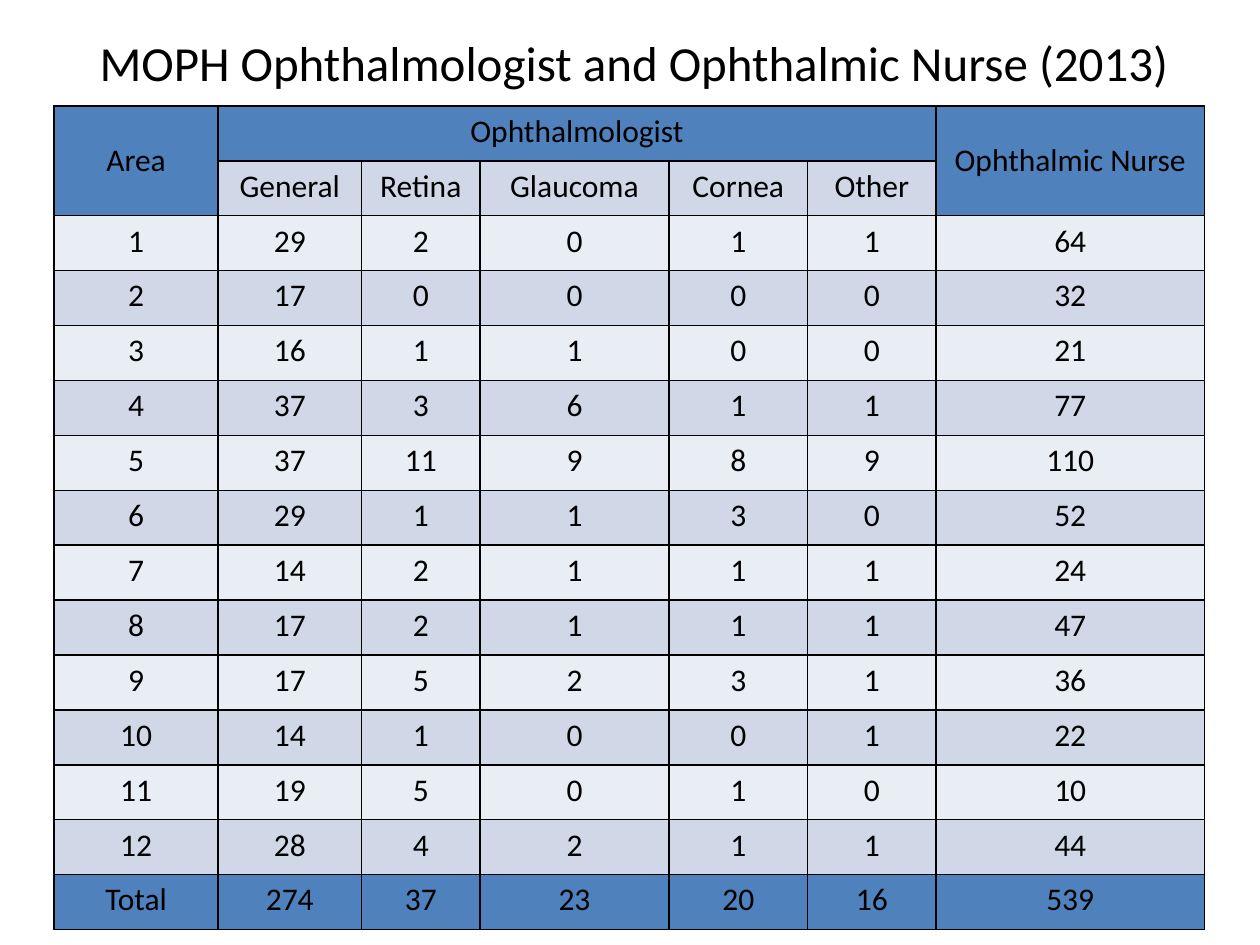
import lxml.etree
import pptx
import pptx.dml.color
import pptx.enum.text
import pptx.oxml.ns
import pptx.util

Inches = pptx.util.Inches
COLUMN_WIDTHS = [1.3, 1.14, 0.94, 1.5, 1.1, 1.02, 2.13]
ROWS = [
    ["Area", "Ophthalmologist", "", "", "", "", "Ophthalmic Nurse"],
    ["", "General", "Retina", "Glaucoma", "Cornea", "Other", ""],
    [1, 29, 2, 0, 1, 1, 64],
    [2, 17, 0, 0, 0, 0, 32],
    [3, 16, 1, 1, 0, 0, 21],
    [4, 37, 3, 6, 1, 1, 77],
    [5, 37, 11, 9, 8, 9, 110],
    [6, 29, 1, 1, 3, 0, 52],
    [7, 14, 2, 1, 1, 1, 24],
    [8, 17, 2, 1, 1, 1, 47],
    [9, 17, 5, 2, 3, 1, 36],
    [10, 14, 1, 0, 0, 1, 22],
    [11, 19, 5, 0, 1, 0, 10],
    [12, 28, 4, 2, 1, 1, 44],
    ["Total", 274, 37, 23, 20, 16, 539],
]
MERGES = [((0, 0), (1, 0)), ((0, 1), (0, 5)), ((0, 6), (1, 6))]


def color(value):
    return pptx.dml.color.RGBColor.from_string(value)


class SlideBuilder:
    font = "Calibri"
    ink = "000000"
    accent = "4F81BD"
    bands = ["E9EDF4", "D0D8E8"]

    def __init__(self, slide):
        self.slide = slide

    def text(self, text_frame, text, size):
        paragraph = text_frame.paragraphs[0]
        paragraph.alignment = pptx.enum.text.PP_ALIGN.CENTER
        run = paragraph.add_run()
        run.text = text
        run.font.name = self.font
        run.font.size = pptx.util.Pt(size)
        run.font.color.rgb = color(self.ink)

    def title(self, text, left, top, width, height):
        shape = self.slide.shapes.title
        shape.left, shape.top = Inches(left), Inches(top)
        shape.width, shape.height = Inches(width), Inches(height)
        text_frame = shape.text_frame
        text_frame.word_wrap = False
        text_frame.auto_size = pptx.enum.text.MSO_AUTO_SIZE.SHAPE_TO_FIT_TEXT
        text_frame.vertical_anchor = pptx.enum.text.MSO_ANCHOR.TOP
        self.text(text_frame, text, 28)

    def borders(self, cell):
        qn = pptx.oxml.ns.qn
        properties = cell._tc.get_or_add_tcPr()
        for side in ("lnL", "lnR", "lnT", "lnB"):
            line = lxml.etree.SubElement(properties, qn(f"a:{side}"), w=str(pptx.util.Pt(1)))
            fill = lxml.etree.SubElement(line, qn("a:solidFill"))
            lxml.etree.SubElement(fill, qn("a:srgbClr"), val=self.ink)

    def cell(self, cell, value, fill):
        self.borders(cell)
        cell.fill.solid()
        cell.fill.fore_color.rgb = color(fill)
        if value != "":
            self.text(cell.text_frame, str(value), 18)
        if cell.is_merge_origin and cell.span_height > 1:
            cell.vertical_anchor = pptx.enum.text.MSO_ANCHOR.MIDDLE

    def row_fill(self, index, count):
        return self.accent if index in (0, count - 1) else self.bands[index % 2]

    def table(self, rows, column_widths, merges, left, top, height):
        frame = self.slide.shapes.add_table(
            len(rows), len(column_widths), Inches(left), Inches(top),
            Inches(sum(column_widths)), Inches(height))
        table = frame.table
        for column, width in zip(table.columns, column_widths):
            column.width = Inches(width)
        for first, last in merges:
            table.cell(*first).merge(table.cell(*last))
        for index, values in enumerate(rows):
            table.rows[index].height = Inches(height / len(rows))
            fill = self.row_fill(index, len(rows))
            for cell, value in zip(table.rows[index].cells, values):
                self.cell(cell, value, fill)


def main():
    presentation = pptx.Presentation()
    presentation.slide_width = Inches(10)
    presentation.slide_height = Inches(7.5)
    slide = presentation.slides.add_slide(presentation.slide_layouts.get_by_name("Title Only"))
    builder = SlideBuilder(slide)
    builder.table(ROWS, COLUMN_WIDTHS, MERGES, 0.43, 0.84, 6.54)
    builder.title("MOPH Ophthalmologist and Ophthalmic Nurse (2013)", 0.64, 0.21, 8.78, 0.57)
    presentation.save("out.pptx")


if __name__ == "__main__":
    main()
